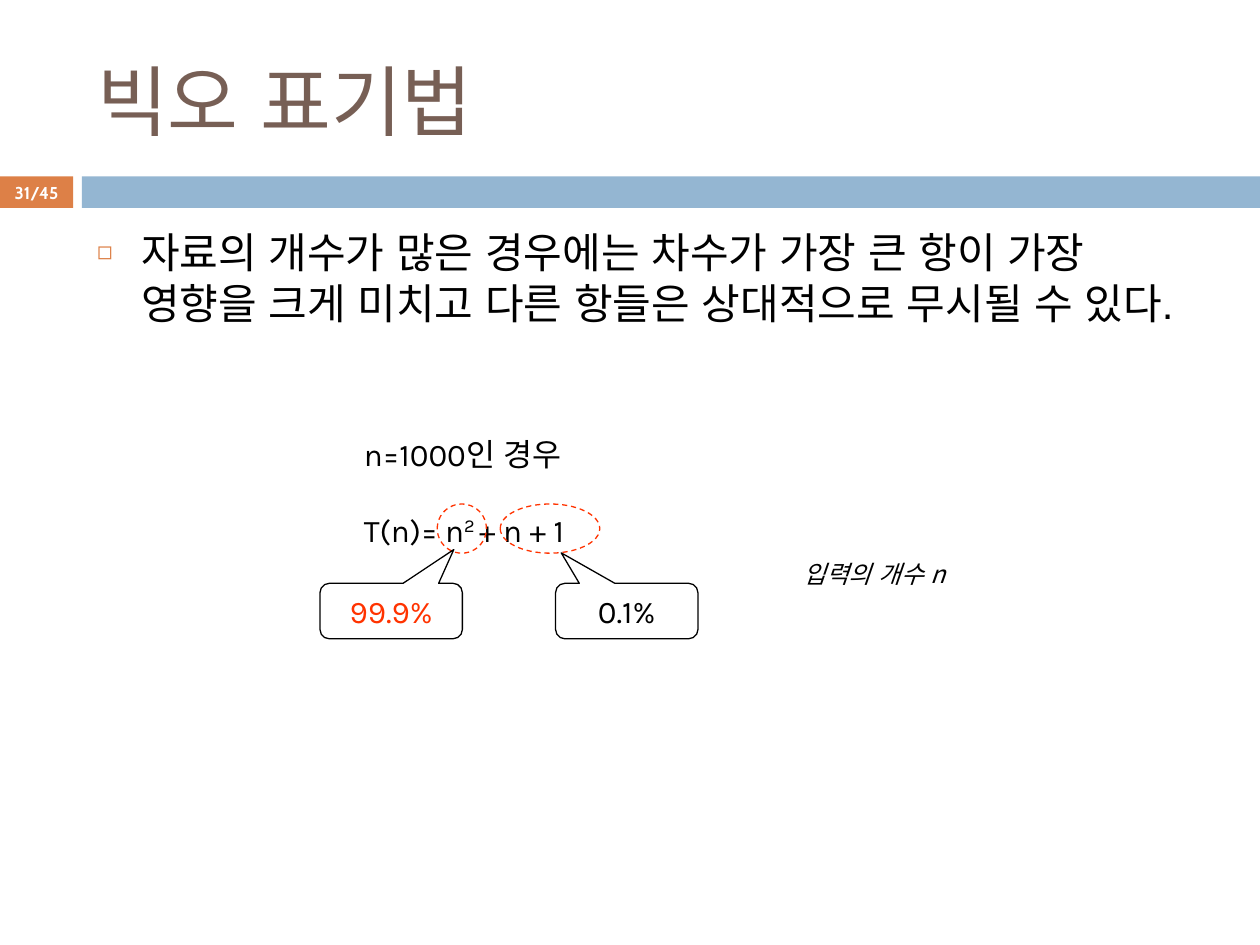
from lxml import etree
from pptx import Presentation
from pptx import util as u
from pptx.dml.color import RGBColor
from pptx.enum import dml, shapes, text
from pptx.oxml.ns import qn

COLORS = {"accent": "DD8047", "band": "94B6D2", "title": "775F55",
          "ink": "000000", "mark": "FF3300", "paper": "FFFFFF"}
EAST_ASIAN = "Arial"

presentation = Presentation()
presentation.slide_width, presentation.slide_height = u.Inches(10), u.Inches(7.5)
slide = presentation.slides.add_slide(presentation.slide_layouts[1])


def write(paragraph, words, font="Karla", size=18, color="ink", bold=False, italic=False, raised=0):
    """Add a run; raised is the superscript offset in percent."""
    run = paragraph.add_run()
    run.text = words
    run.font.name, run.font.size = font, u.Pt(size)
    run.font.bold, run.font.italic = bold, italic
    run.font.color.rgb = RGBColor.from_string(COLORS[color])
    properties = run.font._element
    etree.SubElement(properties, qn("a:ea")).set("typeface", EAST_ASIAN)
    if raised:
        properties.set("baseline", str(raised * 1000))


def add_box(preset, left, top, width, height, fill=None, line=None):
    shape = slide.shapes.add_shape(preset, *map(u.Inches, (left, top, width, height)))
    shape.shadow.inherit = False
    if fill:
        shape.fill.solid()
        shape.fill.fore_color.rgb = RGBColor.from_string(COLORS[fill])
    else:
        shape.fill.background()
    if line:
        shape.line.color.rgb = RGBColor.from_string(COLORS[line])
        shape.line.width = u.Pt(0.75)
    else:
        shape.line.fill.background()
    return shape


# Header band with the page number
badge_width, gap, band_top, band_height = 0.58, 0.07, 1.4, 0.25
band_left = badge_width + gap
badge = add_box(shapes.MSO_SHAPE.RECTANGLE, 0, band_top, badge_width, band_height, fill="accent")
add_box(shapes.MSO_SHAPE.RECTANGLE, band_left, band_top, 10 - band_left, band_height, fill="band")
badge.text_frame.margin_left = badge.text_frame.margin_right = 0
badge.text_frame.paragraphs[0].alignment = text.PP_ALIGN.CENTER
write(badge.text_frame.paragraphs[0], "31/45", font="Cabin", size=9.8, color="paper", bold=True)

# Title and body share one column
title, body = slide.shapes.title, slide.placeholders[1]
for placeholder, top, height, anchor in ((title, 0.25, 1.08, text.MSO_ANCHOR.MIDDLE),
                                         (body, 1.75, 4.92, text.MSO_ANCHOR.TOP)):
    placeholder.left, placeholder.width = u.Inches(0.67), u.Inches(8.92)
    placeholder.top, placeholder.height = u.Inches(top), u.Inches(height)
    placeholder.text_frame.vertical_anchor = anchor
    placeholder.text_frame.auto_size = text.MSO_AUTO_SIZE.NONE
    placeholder.text_frame.paragraphs[0].alignment = text.PP_ALIGN.LEFT
write(title.text_frame.paragraphs[0], "빅오 표기법", font="Cabin", size=44, color="title")

statement = body.text_frame.paragraphs[0]
statement.space_before = u.Pt(0)
layout = statement._p.get_or_add_pPr()
layout.set("marL", str(u.Inches(0.35)))
layout.set("indent", str(-u.Inches(0.35)))
bullet_color = etree.SubElement(layout, qn("a:buClr"))
etree.SubElement(bullet_color, qn("a:srgbClr")).set("val", COLORS["accent"])
etree.SubElement(layout, qn("a:buSzPct")).set("val", "60000")
etree.SubElement(layout, qn("a:buChar")).set("char", "◻")
write(statement, "자료의 개수가 많은 경우에는 차수가 가장 큰 항이 가장 영향을 크게 미치고 "
      "다른 항들은 상대적으로 무시될 수 있다.", font="Arial", size=24)

# Free labels: axis caption and formula
caption, formula = (slide.shapes.add_textbox(*map(u.Inches, place)).text_frame
                    for place in ((6.28, 4.39, 1.42, 0.33), (2.79, 3.4, 1.91, 1)))
for frame in (caption, formula):
    frame.word_wrap = False
    frame.auto_size = text.MSO_AUTO_SIZE.SHAPE_TO_FIT_TEXT
write(caption.paragraphs[0], "입력의 개수 n", font="Noto Sans CJK KR", size=14, italic=True)
write(formula.paragraphs[0], "n=1000인 경우")
equation = formula.add_paragraph()
equation.space_before = u.Pt(22)
write(equation, "T(n)= n")
write(equation, "2 ", raised=30)
write(equation, "+ n + 1")

# Each term: dashed ring, callout below it and the callout's tail offsets
for ring_left, ring_width, callout_left, share, color, tail in (
        (3.47, 0.39, 2.54, "99.9%", "mark", (0.44, -1.11)),
        (3.97, 0.79, 4.41, "0.1%", "ink", (-0.46, -1.05))):
    ring = add_box(shapes.MSO_SHAPE.OVAL, ring_left, 4, ring_width, 0.39, line="mark")
    ring.line.dash_style = dml.MSO_LINE.DASH
    callout = add_box(shapes.MSO_SHAPE.ROUNDED_RECTANGULAR_CALLOUT,
                      callout_left, 4.63, 1.13, 0.44, line="ink")
    callout.adjustments[0], callout.adjustments[1] = tail
    callout.text_frame.paragraphs[0].alignment = text.PP_ALIGN.CENTER
    write(callout.text_frame.paragraphs[0], share, color=color)

presentation.save("out.pptx")
